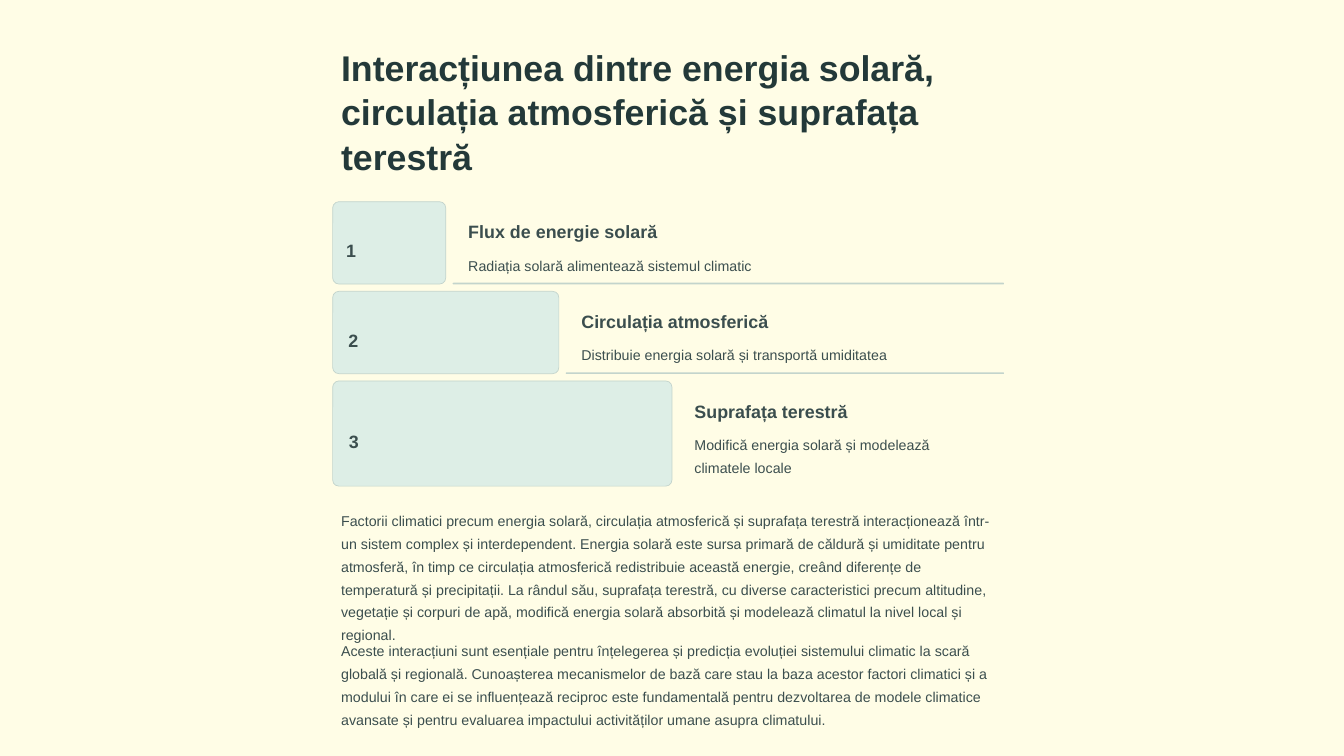
from pptx import Presentation
from pptx.dml.color import RGBColor
from pptx.enum import shapes, text
from pptx.util import Cm, Pt

TITLE = "Interacțiunea dintre energia solară, circulația atmosferică și suprafața terestră"
# number, number width, heading, heading width, detail, detail width, step height
STEPS = [
    ("1", 0.2, "Flux de energie solară", 6.45,
     "Radiația solară alimentează sistemul climatic", 8.56, 2.49),
    ("2", 0.33, "Circulația atmosferică", 6.65,
     "Distribuie energia solară și transportă umiditatea", 9.8, 2.49),
    ("3", 0.36, "Suprafața terestră", 5.46,
     "Modifică energia solară și modelează climatele locale", 9.4, 3.18),
]
# text, top, height
CONCLUSIONS = [
    ("Factorii climatici precum energia solară, circulația atmosferică și suprafața "
     "terestră interacționează într-un sistem complex și interdependent. Energia solară "
     "este sursa primară de căldură și umiditate pentru atmosferă, în timp ce circulația "
     "atmosferică redistribuie această energie, creând diferențe de temperatură și "
     "precipitații. La rândul său, suprafața terestră, cu diverse caracteristici precum "
     "altitudine, vegetație și corpuri de apă, modifică energia solară absorbită și "
     "modelează climatul la nivel local și regional.", 15.19, 3.45),
    ("Aceste interacțiuni sunt esențiale pentru înțelegerea și predicția evoluției "
     "sistemului climatic la scară globală și regională. Cunoașterea mecanismelor de bază "
     "care stau la baza acestor factori climatici și a modului în care ei se influențează "
     "reciproc este fundamentală pentru dezvoltarea de modele climatice avansate și pentru "
     "evaluarea impactului activităților umane asupra climatului.", 19.13, 2.77),
]
CREAM, MINT, SAGE, INK, DARK = "FFFDE6", "DDEEE6", "C3D4CC", "3B4E4E", "233939"
LEFT, WIDTH, RULE_END = 10.06, 20.52, 30.36
STEPS_TOP, STEP_GAP, BLOCK_UNIT, RADIUS = 6.1, 0.22, 3.42, 0.19
NUMBER_HEIGHT, LINE_HEIGHT = 0.86, 0.69


def paint(fill, color):
    fill.solid()
    fill.fore_color.rgb = RGBColor.from_string(color)


def place(box, left, top, width, height):
    box.left, box.top, box.width, box.height = Cm(left), Cm(top), Cm(width), Cm(height)


def write(box, words, size, leading, bold=False, color=INK, wrap=True,
          align=text.PP_ALIGN.LEFT):
    frame = box.text_frame
    frame.text = words
    frame.word_wrap = wrap
    frame.auto_size = text.MSO_AUTO_SIZE.NONE
    frame.vertical_anchor = text.MSO_ANCHOR.TOP
    line = frame.paragraphs[0]
    line.alignment = align
    line.line_spacing = Pt(leading)
    line.space_before = Pt(0)
    line.font.name, line.font.size, line.font.bold = "Arial", Pt(size), bold
    line.font.color.rgb = RGBColor.from_string(color)


def add_label(slide, left, top, width, height, *style, **options):
    box = slide.shapes.add_textbox(Cm(left), Cm(top), Cm(width), Cm(height))
    write(box, *style, **options)


def add_rounded(slide, left, top, width, height, radius, color):
    rounded = slide.shapes.add_shape(shapes.MSO_SHAPE.ROUNDED_RECTANGLE,
                                     Cm(left), Cm(top), Cm(width), Cm(height))
    rounded.adjustments[0] = radius / height
    rounded.shadow.inherit = False
    paint(rounded.fill, color)
    rounded.line.fill.background()
    return rounded


def add_steps(slide):
    top = STEPS_TOP
    for index, (number, number_width, heading, heading_width,
                detail, detail_width, height) in enumerate(STEPS):
        last = index == len(STEPS) - 1
        block_width = BLOCK_UNIT * (index + 1)
        block_end = LEFT + block_width
        block = add_rounded(slide, LEFT, top, block_width, height, RADIUS, MINT)
        paint(block.line.fill, SAGE)
        block.line.width = Pt(0.6)
        add_label(slide, LEFT + 0.46, top + (height - NUMBER_HEIGHT) / 2, number_width,
                  NUMBER_HEIGHT, number, 15.3, 24.5, bold=True, wrap=False,
                  align=text.PP_ALIGN.CENTER)
        add_label(slide, block_end + 0.43, top + 0.43, heading_width, LINE_HEIGHT,
                  heading, 15.3, 19.1, bold=True, wrap=False)
        add_label(slide, block_end + 0.43, top + 1.37, detail_width,
                  LINE_HEIGHT * (2 if last else 1), detail, 12.2, 19.6, wrap=last)
        if not last:
            rule_left = block_end + 0.21
            add_rounded(slide, rule_left, top + 2.45, RULE_END - rule_left, 0.05, 0.02, SAGE)
        top += height + STEP_GAP


def main():
    deck = Presentation()
    deck.slide_width, deck.slide_height = Cm(40.64), Cm(22.86)
    slide = deck.slides.add_slide(deck.slide_layouts[3])
    paint(slide.background.fill, CREAM)

    title, *bodies = slide.placeholders
    place(title, LEFT, 1.19, WIDTH, 4.04)
    write(title, TITLE, 30.6, 38.3, bold=True, color=DARK)
    add_steps(slide)
    for body, (words, top, height) in zip(bodies, CONCLUSIONS):
        place(body, LEFT, top, WIDTH, height)
        body.text_frame.text = words
        properties = body.text_frame.paragraphs[0]._p.get_or_add_pPr()
        properties.set("marL", "0")
        properties.set("indent", "0")
        write(body, words, 12.2, 19.6)
        properties = body.text_frame.paragraphs[0]._p.get_or_add_pPr()
        bullet = properties.makeelement(
            "{http://schemas.openxmlformats.org/drawingml/2006/main}buNone", {})
        properties.find("{*}defRPr").addprevious(bullet)
        properties.set("marL", "0")
        properties.set("indent", "0")
    deck.save("out.pptx")


if __name__ == "__main__":
    main()
